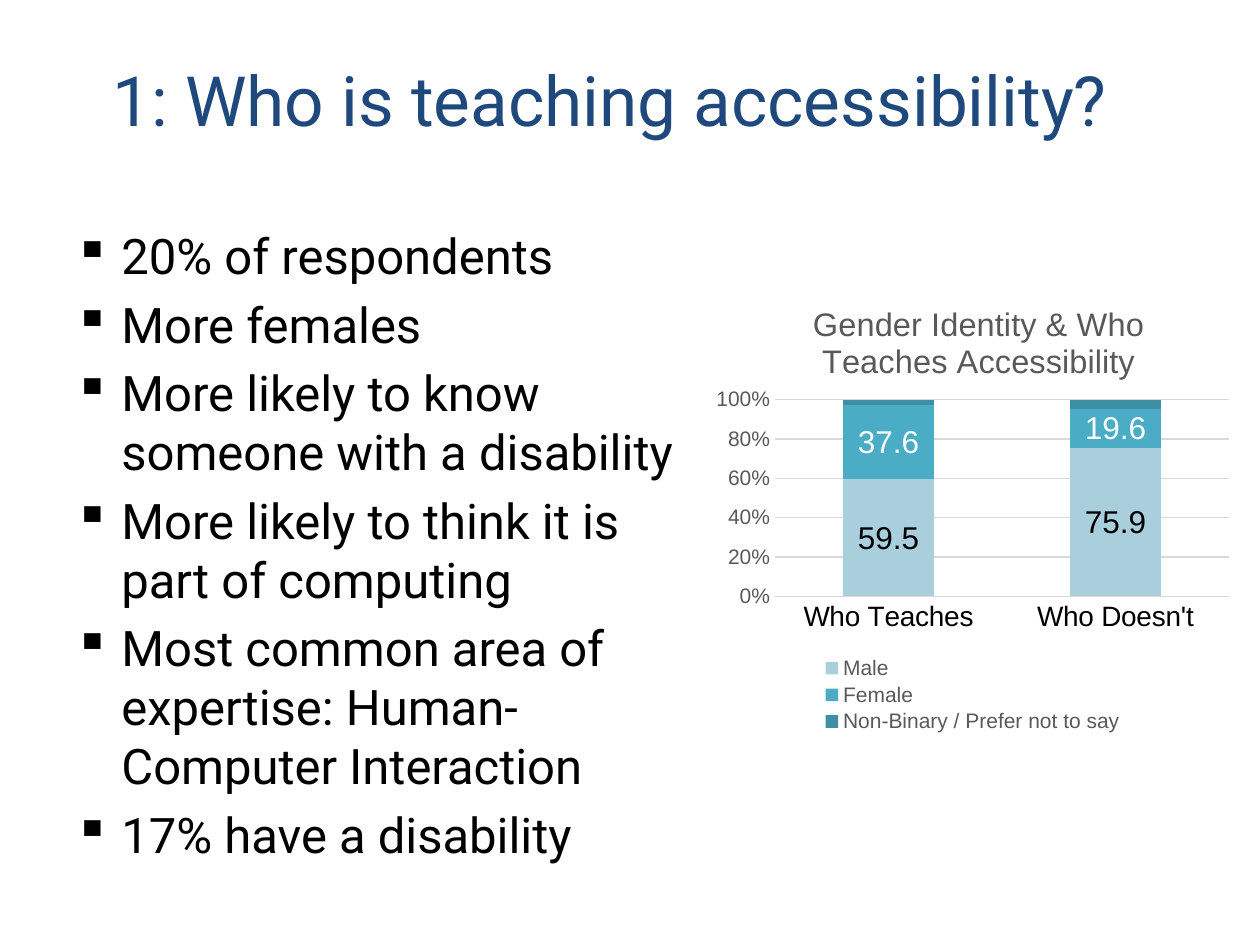
from lxml import etree
from pptx import Presentation
from pptx import util as u
from pptx.chart.data import CategoryChartData
from pptx.dml.color import RGBColor
from pptx.enum import chart as kinds, text
from pptx.oxml import parse_xml
from pptx.oxml.ns import nsdecls, qn

TITLE = "1: Who is teaching accessibility?"
POINTS = [
    "20% of respondents",
    "More females",
    "More likely to know someone with a disability",
    "More likely to think it is part of computing",
    "Most common area of expertise: Human-Computer Interaction",
    "17% have a disability",
]
CHART_TITLE = "Gender Identity & Who Teaches Accessibility"
GROUPS = ["Who Teaches", "Who Doesn't"]
SERIES = [
    ("Male", (59.5, 75.9), "male", "black"),
    ("Female", (37.6, 19.6), "female", "white"),
    ("Non-Binary / Prefer not to say", (3, 5), "other", None),
]
COLORS = {
    "title": "1F497D", "black": "000000", "white": "FFFFFF",
    "grey": "595959", "rule": "D9D9D9",
    "male": "A9CEDC", "female": "4BACC6", "other": "3E8FA4",
}
INDENT = 27


def color(name):
    return RGBColor.from_string(COLORS[name])


def set_font(font, name, size, shade):
    font.name, font.size, font.bold = name, u.Pt(size), False
    font.color.rgb = color(shade)


def add_text(page, area, lines, size, shade, anchor):
    frame = page.shapes.add_textbox(*map(u.Pt, area)).text_frame
    frame.word_wrap = True
    frame.vertical_anchor = anchor
    frame.text = "\n".join(lines)
    for para in frame.paragraphs:
        set_font(para.font, "Roboto", size, shade)
    return frame.paragraphs


def add_bullet(para):
    para.space_before = u.Pt(5.6)
    props = para._p.get_or_add_pPr()
    props.set("marL", str(u.Pt(INDENT)))
    props.set("indent", str(u.Pt(-INDENT)))
    mark = etree.Element(qn("a:buChar"), char="▪")
    props.find(qn("a:spcBef")).addnext(mark)


def place(holder, x, y, w=None, h=None, inner=False):
    parts = [("xMode", "edge"), ("yMode", "edge"), ("x", x), ("y", y)]
    if inner:
        parts.insert(0, ("layoutTarget", "inner"))
    if w:
        parts += [("w", w), ("h", h)]
    body = "".join(f'<c:{tag} val="{value}"/>' for tag, value in parts)
    layout = parse_xml(
        f'<c:layout {nsdecls("c")}><c:manualLayout>{body}</c:manualLayout></c:layout>')
    for old in holder.findall(qn("c:layout")):
        holder.remove(old)
    before = [child for child in holder
              if child.tag in (qn("c:tx"), qn("c:legendPos"), qn("c:legendEntry"))]
    holder.insert(len(before), layout)


def add_gender_chart(page, area):
    data = CategoryChartData()
    data.categories = GROUPS
    for name, values, *_ in SERIES:
        data.add_series(name, values)
    chart = page.shapes.add_chart(
        kinds.XL_CHART_TYPE.COLUMN_STACKED_100, *map(u.Pt, area), data).chart
    set_font(chart.font, "Arial", 10, "black")

    heading = chart.chart_title.text_frame
    heading.text = CHART_TITLE
    set_font(heading.paragraphs[0].font, "Arial", 18.6, "grey")
    chart.chart_title.include_in_layout = False

    chart.has_legend = True
    chart.legend.position = kinds.XL_LEGEND_POSITION.BOTTOM
    chart.legend.include_in_layout = False
    set_font(chart.legend.font, "Arial", 12, "grey")

    for axis, size, shade in ((chart.category_axis, 16, "black"),
                              (chart.value_axis, 12, "grey")):
        axis.major_tick_mark = axis.minor_tick_mark = kinds.XL_TICK_MARK.NONE
        set_font(axis.tick_labels.font, "Arial", size, shade)
    values = chart.value_axis
    values.maximum_scale, values.major_unit = 1, 0.2
    values.tick_labels.number_format = "0%"
    values.tick_labels.number_format_is_linked = False
    values.format.line.fill.background()
    for line in (chart.category_axis.format.line, values.major_gridlines.format.line):
        line.width = u.Pt(0.75)
        line.color.rgb = color("rule")

    plot = chart.plots[0]
    plot.gap_width, plot.overlap, plot.vary_by_categories = 150, 100, False
    for series, (_, _, fill, label) in zip(plot.series, SERIES):
        series.format.fill.solid()
        series.format.fill.fore_color.rgb = color(fill)
        if label:
            series.data_labels.show_value = True
            set_font(series.data_labels.font, "Arial", 18, label)

    root = chart._chartSpace.chart
    place(root.find(qn("c:title")), 0.19, 0.06)
    place(root.plotArea, 0.13, 0.28, 0.85, 0.42, inner=True)
    place(root.find(qn("c:legend")), 0.21, 0.82, 0.58, 0.18)


deck = Presentation()
deck.slide_width, deck.slide_height = u.Pt(720), u.Pt(540)
page = deck.slides.add_slide(deck.slide_layouts[6])

title = add_text(page, (24.5, 11.5, 648, 90), [TITLE], 39.6, "title",
                 text.MSO_ANCHOR.MIDDLE)
title[0].alignment = text.PP_ALIGN.CENTER
for para in add_text(page, (35.3, 125.3, 368.6, 324.7), POINTS, 28, "black",
                     text.MSO_ANCHOR.TOP):
    add_bullet(para)
add_gender_chart(page, (403.2, 153.4, 305.3, 267.8))

deck.save("out.pptx")
